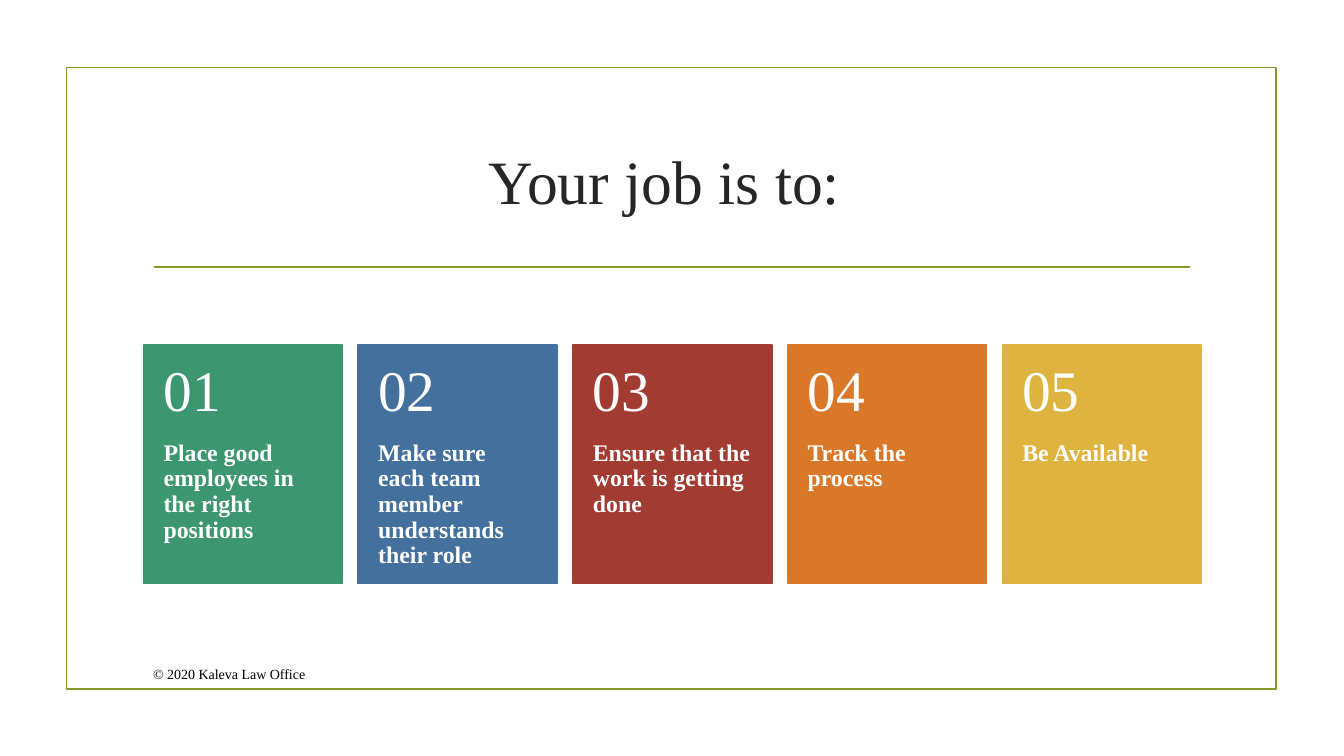
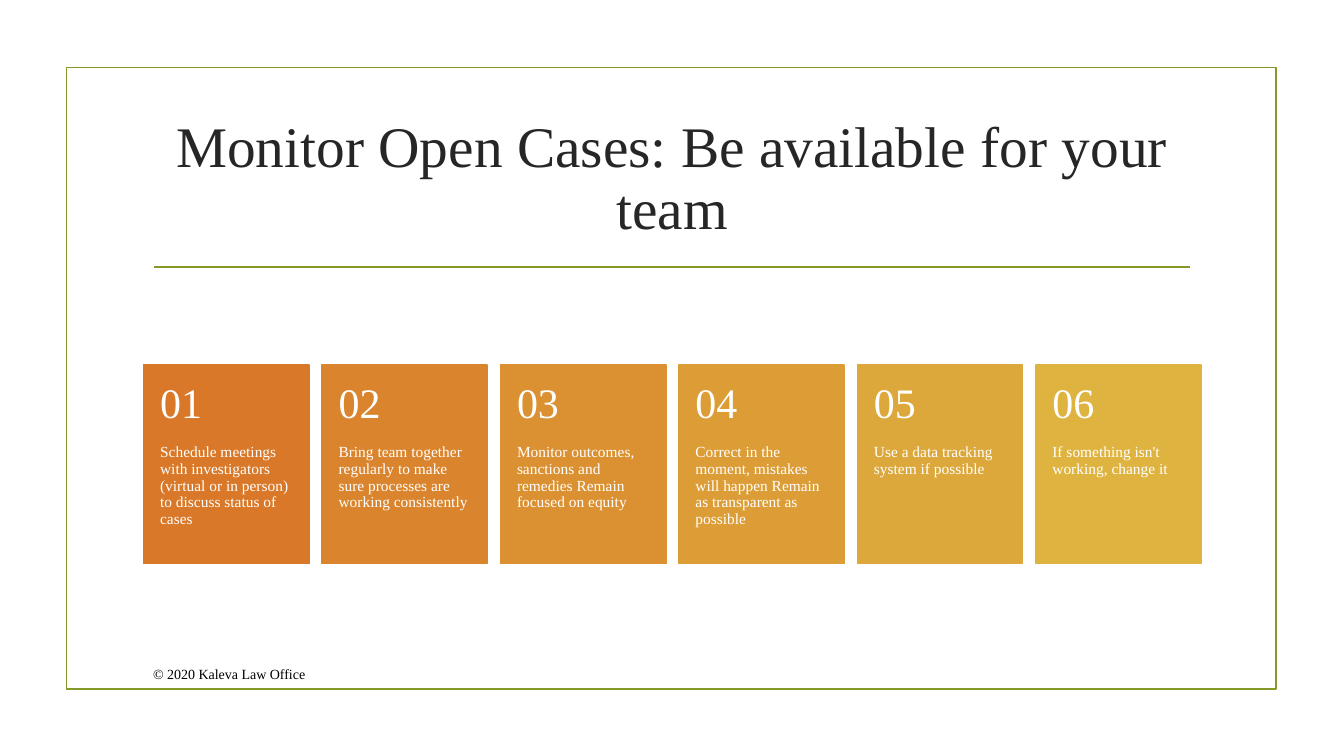
"""Build two slides of numbered cards on one framed layout."""
from dataclasses import dataclass

from lxml import etree
from pptx import Presentation
from pptx.dml import color
from pptx.enum import shapes, text
from pptx.oxml import ns
from pptx.util import Cm, Pt

FONT = "Times New Roman"
OLIVE, INK, BLACK, WHITE = "83992A", "262626", "000000", "FFFFFF"
COPYRIGHT = "© 2020 Kaleva Law Office"
ROW_LEFT, ROW_WIDTH, ROW_MIDDLE = 3.62, 26.65, 11.7
GAP_RATIO, HEIGHT_RATIO, NUMBER_RATIO, INSET_RATIO = 0.08, 1.2, 0.4, 0.1


@dataclass(frozen=True)
class Card:
    label: str
    fill: str


@dataclass(frozen=True)
class CardPage:
    title: str
    title_size: float
    title_spacing: float
    number_size: float
    label_size: float
    label_bold: bool
    cards: tuple[Card, ...]


PAGES = (
    CardPage("Your job is to: ", 44, 1.0, 41, 17, True, (
        Card("Place good employees in the right positions", "3C9770"),
        Card("Make sure each team member understands their role", "44709D"),
        Card("Ensure that the work is getting done", "A23C33"),
        Card("Track the process", "D97828"),
        Card("Be Available", "DEB340"),
    )),
    CardPage("Monitor Open Cases: Be available for your team", 41, 0.9, 30, 11, False, (
        Card("Schedule meetings with investigators (virtual or in person) "
             "to discuss status of cases", "D97828"),
        Card("Bring team together regularly to make sure processes are "
             "working consistently", "DA852D"),
        Card("Monitor outcomes, sanctions and remedies Remain focused on equity", "DB9132"),
        Card("Correct in the moment, mistakes will happen Remain as "
             "transparent as possible", "DC9D36"),
        Card("Use a data tracking system if possible", "DDA83B"),
        Card("If something isn't working, change it", "DEB340"),
    )),
)


def rgb(value: str) -> color.RGBColor:
    return color.RGBColor.from_string(value)


def write_text(box, content: str, *, size: float, fill: str, bold: bool = False,
               align=text.PP_ALIGN.LEFT, anchor=text.MSO_ANCHOR.MIDDLE,
               spacing: float = 1.0, insets=(0.25, 0.13, 0.25, 0.13)) -> None:
    frame = box.text_frame
    frame.word_wrap = True
    frame.auto_size = text.MSO_AUTO_SIZE.NONE
    frame.vertical_anchor = anchor
    (frame.margin_left, frame.margin_top,
     frame.margin_right, frame.margin_bottom) = map(Cm, insets)
    para = frame.paragraphs[0]
    para.alignment = align
    para.line_spacing = spacing
    span = para.add_run()
    span.text = content
    span.font.name = FONT
    span.font.size = Pt(size)
    span.font.bold = bold
    span.font.color.rgb = rgb(fill)


def add_rectangle(page, left: float, top: float, width: float, height: float,
                  *, line: str, fill: str | None = None):
    box = page.shapes.add_shape(shapes.MSO_SHAPE.RECTANGLE,
                                Cm(left), Cm(top), Cm(width), Cm(height))
    box.shadow.inherit = False
    box.line.color.rgb = rgb(line)
    box.line.width = Pt(1.25)
    if fill:
        box.fill.solid()
        box.fill.fore_color.rgb = rgb(fill)
    else:
        box.fill.background()
    return box


def add_rule(page, left: float, right: float, top: float):
    rule = page.shapes.add_connector(shapes.MSO_CONNECTOR.STRAIGHT,
                                     Cm(left), Cm(top), Cm(right), Cm(top))
    rule.line.color.rgb = rgb(OLIVE)
    rule.line.width = Pt(1.25)
    etree.SubElement(rule.element.spPr, ns.qn("a:effectLst"))
    return rule


def decorate_layout(layout, page) -> None:
    frame = add_rectangle(page, 1.68, 1.7, 30.48, 15.67, line=OLIVE)
    rule = add_rule(page, 3.89, 30, 6.73)
    for number, item in enumerate((frame, rule), 100):
        item.element.xpath(".//p:cNvPr")[0].set("id", str(number))
        layout.shapes.element.append(item.element)


def add_card(page, content: CardPage, card: Card, index: int) -> None:
    count = len(content.cards)
    width = ROW_WIDTH / (count + (count - 1) * GAP_RATIO)
    height = width * HEIGHT_RATIO
    number_height = height * NUMBER_RATIO
    inset = width * INSET_RATIO
    left = ROW_LEFT + index * width * (1 + GAP_RATIO)
    top = ROW_MIDDLE - height / 2
    box = add_rectangle(page, left, top, width, height, line=card.fill, fill=card.fill)
    write_text(box, card.label, size=content.label_size, fill=WHITE,
               bold=content.label_bold, anchor=text.MSO_ANCHOR.TOP, spacing=0.9,
               insets=(inset, number_height, inset, 0))
    number = page.shapes.add_textbox(Cm(left), Cm(top), Cm(width), Cm(number_height))
    write_text(number, f"{index + 1:02}", size=content.number_size, fill=WHITE,
               spacing=0.9, insets=(inset, 0.46, inset, 0.46))


def fill_page(page, content: CardPage) -> None:
    title = page.shapes.title
    title.left, title.top, title.width, title.height = map(Cm, (3.61, 2.72, 26.67, 3.63))
    write_text(title, content.title, size=content.title_size, fill=INK,
               align=text.PP_ALIGN.CENTER, spacing=content.title_spacing)
    footer = page.shapes.add_textbox(Cm(3.61), Cm(16.59), Cm(20.29), Cm(0.79))
    write_text(footer, COPYRIGHT, size=10, fill=BLACK)
    for index, card in enumerate(content.cards):
        add_card(page, content, card, index)


def main() -> None:
    deck = Presentation()
    deck.slide_width, deck.slide_height = Cm(33.87), Cm(19.05)
    layout = deck.slide_layouts.get_by_name("Title Only")
    pages = [deck.slides.add_slide(layout) for _ in PAGES]
    decorate_layout(layout, pages[0])
    for page, content in zip(pages, PAGES):
        fill_page(page, content)
    deck.save("out.pptx")


if __name__ == "__main__":
    main()
